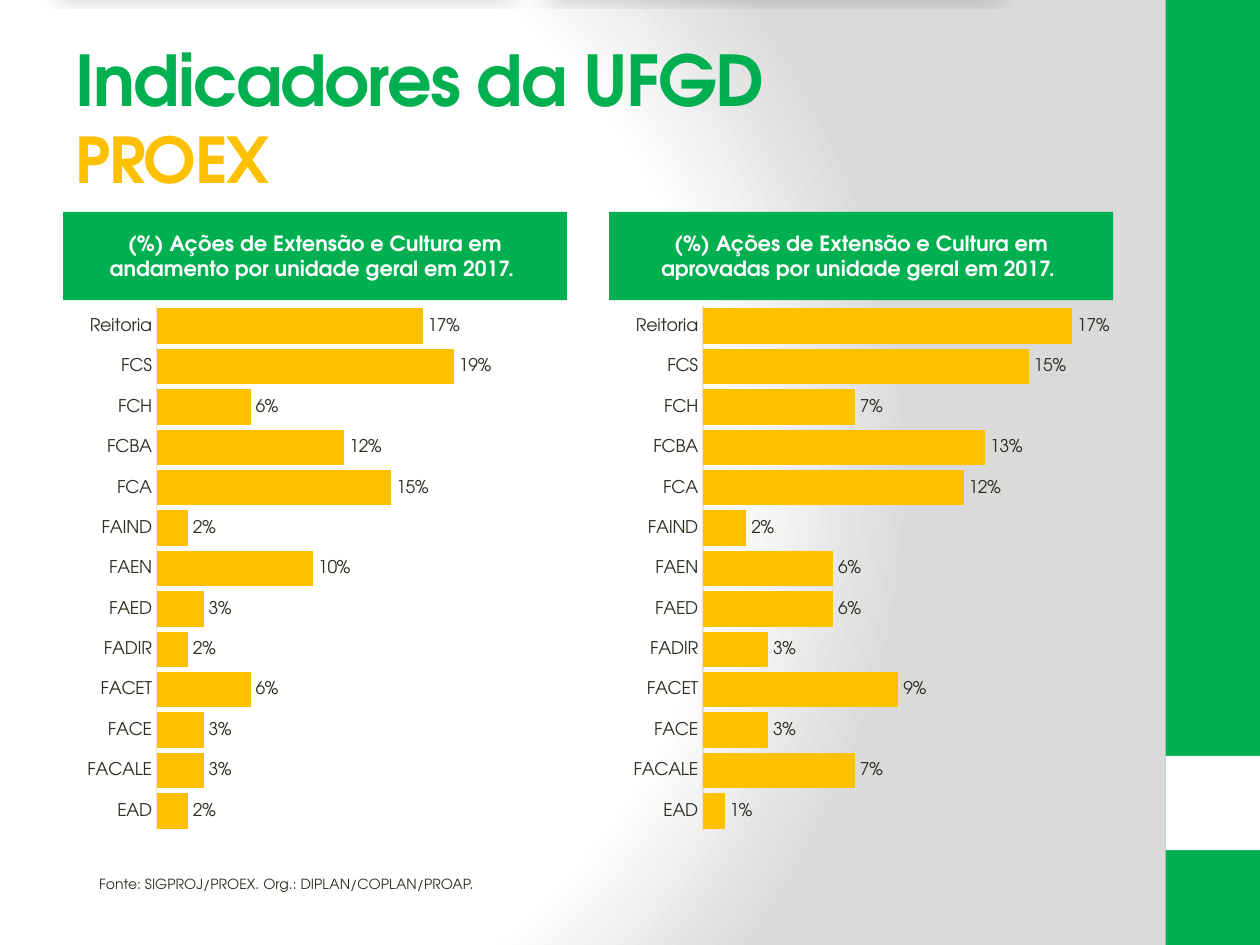
from dataclasses import dataclass

from pptx import Presentation
from pptx.chart.data import CategoryChartData
from pptx.dml.color import RGBColor
from pptx.enum.chart import XL_CHART_TYPE as ChartType
from pptx.enum.chart import XL_LABEL_POSITION as LabelPosition
from pptx.enum.chart import XL_TICK_MARK as TickMark
from pptx.enum.shapes import MSO_SHAPE as ShapeKind
from pptx.enum.text import MSO_ANCHOR as Anchor
from pptx.enum.text import MSO_AUTO_SIZE as AutoSize
from pptx.enum.text import PP_ALIGN as Align
from pptx.oxml import parse_xml
from pptx.oxml.ns import nsdecls, qn
from pptx.util import Cm, Pt


@dataclass(frozen=True)
class Theme:
    green: str = "00B050"
    yellow: str = "FFC000"
    white: str = "FFFFFF"
    grey: str = "DADADA"
    text: str = "2F2B20"
    axis: str = "E5E2D9"
    font: str = "TeX Gyre Adventor"
    chart_font: str = "Calibri"
    title_size: int = 40
    subtitle_size: int = 36
    header_size: int = 12
    chart_size: int = 10
    source_size: int = 8


def set_values(target, values):
    for name, value in values.items():
        setattr(target, name, value)


class SlideBuilder:
    def __init__(self, slide, theme):
        self.slide = slide
        self.theme = theme

    def format_font(self, font, size, color, **values):
        set_values(font, {"name": self.theme.font, "size": Pt(size), **values})
        font.color.rgb = RGBColor.from_string(color)

    def place(self, shape, box):
        names = ("left", "top", "width", "height")
        set_values(shape, dict(zip(names, map(Cm, box))))

    def fill(self, shape, color):
        shape.fill.solid()
        shape.fill.fore_color.rgb = RGBColor.from_string(color)

    def background(self):
        fill = self.slide.background.fill
        fill.solid()
        stops = ((0, self.theme.white), (75, self.theme.white), (100, self.theme.grey))
        stop_xml = "".join(
            f'<a:gs pos="{position * 1000}"><a:srgbClr val="{color}"/></a:gs>'
            for position, color in stops)
        gradient = parse_xml(
            f'<a:gradFill {nsdecls("a")} rotWithShape="1"><a:gsLst>{stop_xml}</a:gsLst>'
            '<a:path path="circle"><a:fillToRect l="20000" t="50000" r="100000" b="50000"/>'
            '</a:path></a:gradFill>')
        solid = next(self.slide.element.iter(qn("a:solidFill")))
        solid.getparent().replace(solid, gradient)

    def band(self, box, color):
        shape = self.slide.shapes.add_shape(ShapeKind.RECTANGLE, *map(Cm, box))
        shape.shadow.inherit = False
        self.fill(shape, color)
        shape.line.fill.background()

    def title(self, box, lines):
        shape = self.slide.shapes.title
        self.place(shape, box)
        set_values(shape.text_frame, {"vertical_anchor": Anchor.MIDDLE,
                                      "word_wrap": True, "auto_size": AutoSize.NONE})
        paragraph = shape.text_frame.paragraphs[0]
        paragraph.alignment = Align.LEFT
        for number, (text, size, color) in enumerate(lines):
            if number:
                paragraph.add_line_break()
            run = paragraph.add_run()
            run.text = text
            self.format_font(run.font, size, color, bold=True)
            run.font._element.set("spc", "-100")

    def header(self, placeholder, box, text):
        shape = self.slide.placeholders[placeholder]
        self.place(shape, box)
        self.fill(shape, self.theme.green)
        # Flattened perspective shadow
        shape._element.spPr.append(parse_xml(
            f'<a:effectLst {nsdecls("a")}><a:outerShdw blurRad="152400" dist="317500" '
            'dir="5400000" sx="90000" sy="-19000" rotWithShape="0"><a:srgbClr val="000000">'
            '<a:alpha val="15000"/></a:srgbClr></a:outerShdw></a:effectLst>'))
        set_values(shape.text_frame, {"vertical_anchor": Anchor.MIDDLE,
                                      "word_wrap": True, "auto_size": AutoSize.NONE})
        paragraph = shape.text_frame.paragraphs[0]
        paragraph.alignment = Align.CENTER
        run = paragraph.add_run()
        run.text = text
        self.format_font(run.font, self.theme.header_size, self.theme.white, bold=True)

    def text(self, box, text):
        shape = self.slide.shapes.add_textbox(*map(Cm, box))
        set_values(shape.text_frame, {"word_wrap": True,
                                      "auto_size": AutoSize.SHAPE_TO_FIT_TEXT})
        run = shape.text_frame.paragraphs[0].add_run()
        run.text = text
        self.format_font(run.font, self.theme.source_size, self.theme.text)

    def bar_chart(self, box, units, percentages, maximum):
        theme = self.theme
        data = CategoryChartData(number_format="0%")
        data.categories = units
        data.add_series("Series 1", [value / 100 for value in percentages])
        chart = self.slide.shapes.add_chart(
            ChartType.BAR_CLUSTERED, *map(Cm, box), data).chart
        set_values(chart, {"has_title": False, "has_legend": False})
        self.format_font(chart.font, theme.chart_size, theme.text, name=theme.chart_font)

        # Axes
        category_axis = chart.category_axis
        set_values(category_axis, {"major_tick_mark": TickMark.NONE,
                                   "minor_tick_mark": TickMark.NONE,
                                   "has_major_gridlines": False})
        category_axis.format.line.width = Pt(0.75)
        category_axis.format.line.color.rgb = RGBColor.from_string(theme.axis)
        self.format_font(category_axis.tick_labels.font, theme.chart_size, theme.text)
        set_values(chart.value_axis, {"visible": False, "has_major_gridlines": False,
                                      "minimum_scale": 0, "maximum_scale": maximum})

        # Bars and labels
        plot = chart.plots[0]
        set_values(plot, {"gap_width": 14, "vary_by_categories": False,
                          "has_data_labels": True})
        self.fill(plot.series[0].format, theme.yellow)
        labels = plot.data_labels
        set_values(labels, {"show_value": True, "number_format": "0%",
                            "number_format_is_linked": False,
                            "position": LabelPosition.OUTSIDE_END})
        self.format_font(labels.font, theme.chart_size, theme.text)

        # Inner plot area
        area = next(chart._chartSpace.iter(qn("c:plotArea")))
        for layout in area.findall(qn("c:layout")):
            area.remove(layout)
        sizes = {"x": 0.186, "y": 0.011, "w": 0.776, "h": 0.965}
        modes = '<c:xMode val="edge"/><c:yMode val="edge"/>'
        values = "".join(f'<c:{name} val="{value}"/>' for name, value in sizes.items())
        area.insert(0, parse_xml(
            f'<c:layout {nsdecls("c")}><c:manualLayout><c:layoutTarget val="inner"/>'
            f'{modes}{values}</c:manualLayout></c:layout>'))

    def remove_empty_placeholders(self):
        for shape in list(self.slide.placeholders):
            if not shape.text_frame.text:
                shape._element.getparent().remove(shape._element)


UNITS = ["EAD", "FACALE", "FACE", "FACET", "FADIR", "FAED", "FAEN", "FAIND",
         "FCA", "FCBA", "FCH", "FCS", "Reitoria"]

# Placeholder, left edge, wording, percentages, axis maximum
PANELS = [
    (1, 1.27, "andamento", [2, 3, 3, 6, 2, 3, 10, 2, 15, 12, 6, 19, 17], 0.25),
    (3, 12.28, "aprovadas", [1, 7, 3, 9, 3, 6, 6, 2, 12, 13, 7, 15, 17], 0.18),
]


def main():
    theme = Theme()
    presentation = Presentation()
    set_values(presentation, {"slide_width": Cm(25.4), "slide_height": Cm(19.05)})
    slide = presentation.slides.add_slide(presentation.slide_layouts[4])
    builder = SlideBuilder(slide, theme)

    # Background and side band
    builder.background()
    builder.band((23.5, 0, 1.9, 19.05), theme.green)
    builder.band((23.5, 15.24, 1.9, 1.9), theme.white)

    # Title
    builder.title((1.27, 0.76, 21.17, 3.18), [
        ("Indicadores da UFGD", theme.title_size, theme.green),
        ("PROEX", theme.subtitle_size, theme.yellow)])

    # Headers and their charts
    for placeholder, left, status, percentages, maximum in PANELS:
        builder.header(placeholder, (left, 4.27, 10.16, 1.78),
                       f"(%) Ações de Extensão e Cultura em {status} por unidade geral em 2017. ")
        builder.bar_chart((left, 6.05, 10.16, 10.97), UNITS, percentages, maximum)

    # Source
    builder.text((1.75, 17.53, 8.61, 0.6), "Fonte: SIGPROJ/PROEX. Org.: DIPLAN/COPLAN/PROAP.")

    builder.remove_empty_placeholders()
    presentation.save("out.pptx")


if __name__ == "__main__":
    main()
